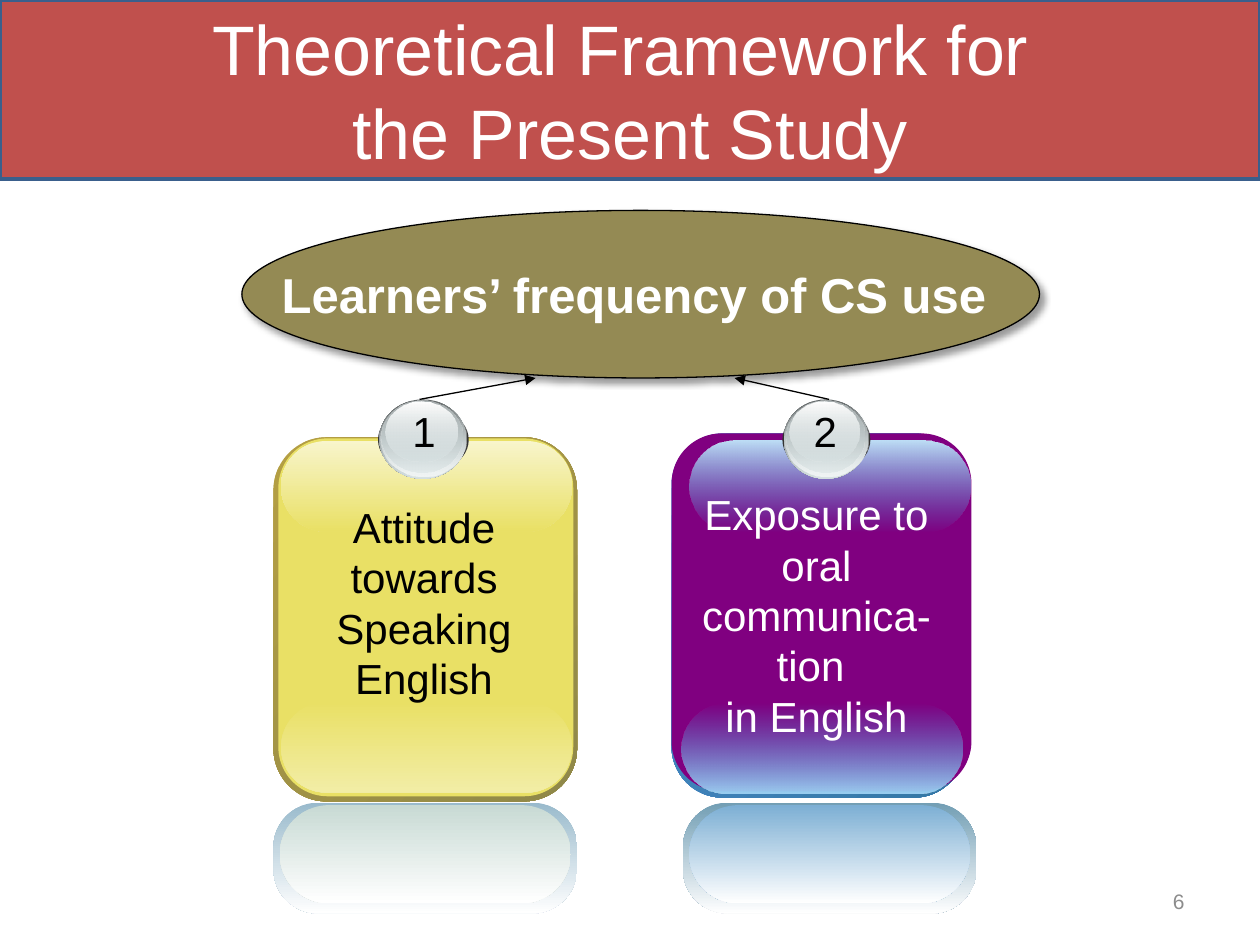
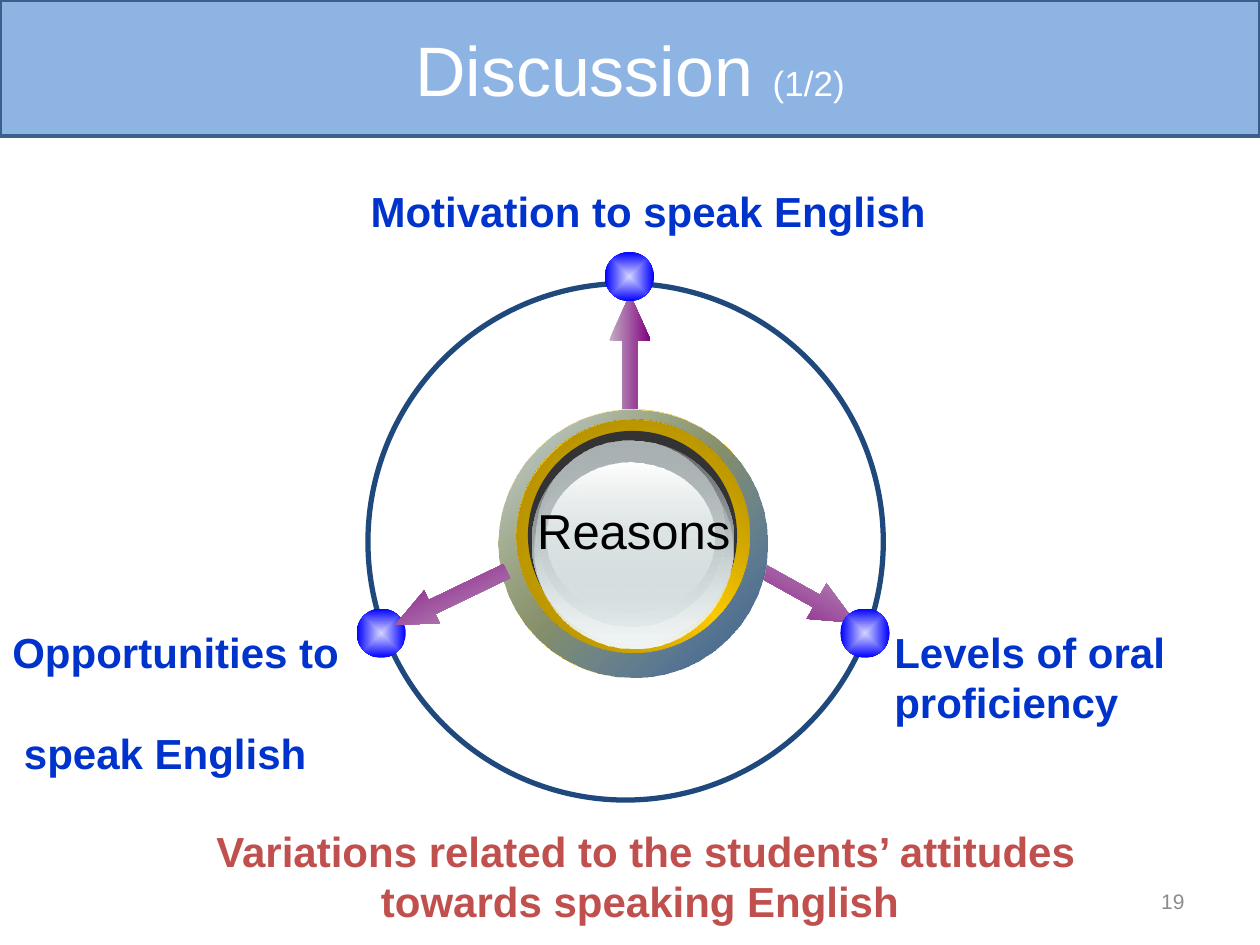
from pptx import Presentation
from pptx.dml.color import RGBColor
from pptx.enum.shapes import MSO_CONNECTOR, MSO_SHAPE
from pptx.enum.text import MSO_ANCHOR, PP_ALIGN
from pptx.oxml import parse_xml
from pptx.util import Inches, Pt

OVAL = MSO_SHAPE.OVAL
ROUNDED = MSO_SHAPE.ROUNDED_RECTANGLE
ARROW = MSO_SHAPE.RIGHT_ARROW
RECTANGLE = MSO_SHAPE.RECTANGLE
STRAIGHT = MSO_CONNECTOR.STRAIGHT
LEFT, CENTER, RIGHT = PP_ALIGN.LEFT, PP_ALIGN.CENTER, PP_ALIGN.RIGHT
TOP, MIDDLE = MSO_ANCHOR.TOP, MSO_ANCHOR.MIDDLE

FONT = "Arial"
NAMESPACE = 'xmlns:a="http://schemas.openxmlformats.org/drawingml/2006/main"'
COLORS = {
    "black": "000000", "white": "FFFFFF", "number": "8C8C8C",
    "red": "C0504D", "sky": "8EB4E3", "band_line": "3A5F8C",
    "olive": "948A54", "yellow": "E9E065", "purple": "800080",
    "label": "0033CC", "orbit": "1F497D", "gold": "FFCC00",
    "dark": "333333", "glass": "D6E1E2", "blue": "3CA1E6",
}

# A gradient is a list of (position, colour, opacity) stops in percent.
GLASS_FILLS = [
    COLORS["dark"],
    [(0, "636869", 100), (100, COLORS["glass"], 100)],
    [(0, COLORS["glass"], 0), (100, "F1F5F5", 100)],
    [(0, "AAB2B3", 100), (100, COLORS["glass"], 48)],
    [(0, COLORS["white"], 100), (100, COLORS["glass"], 38)],
]
ARROW_FILL = [(0, "C3B0C3", 100), (100, COLORS["purple"], 100)]
DOT_FILL = [(0, "D5D5FF", 100), (100, "0000FF", 100)]


def add_shape(shapes, kind, at, fill=None, angle=90, line=None, width=1,
              adjust=(), rotation=0):
    """Add a preset shape; angle None makes a gradient run out from the centre."""
    shape = shapes.add_shape(kind, *[Inches(length) for length in at])
    shape.shadow.inherit = False
    shape.rotation = rotation
    for index, value in enumerate(adjust):
        shape.adjustments[index] = value
    shape.fill.background()
    if isinstance(fill, str):
        shape.fill.solid()
        shape.fill.fore_color.rgb = RGBColor.from_string(fill)
    elif fill:
        stops = "".join(
            f'<a:gs pos="{position * 1000}"><a:srgbClr val="{color}">'
            f'<a:alpha val="{opacity * 1000}"/></a:srgbClr></a:gs>'
            for position, color, opacity in fill)
        course = f'<a:lin ang="{(angle or 0) * 60000}" scaled="0"/>'
        if angle is None:
            course = ('<a:path path="shape"><a:fillToRect l="50000" t="50000" '
                      'r="50000" b="50000"/></a:path>')
        properties = shape._element.spPr
        empty_fill = properties.find("{*}noFill")
        properties.replace(empty_fill, parse_xml(
            f'<a:gradFill {NAMESPACE} rotWithShape="1">'
            f'<a:gsLst>{stops}</a:gsLst>{course}</a:gradFill>'))
    if line:
        shape.line.color.rgb = RGBColor.from_string(line)
        shape.line.width = Pt(width)
    else:
        shape.line.fill.background()
    return shape


def write(box, text, size=24, color="black", bold=False, align=CENTER,
          anchor=TOP, wrap=True, before=0, same_line=False):
    """Append text to a box, as a new paragraph unless same_line is set."""
    frame = box.text_frame
    frame.word_wrap = wrap
    frame.vertical_anchor = anchor
    para = frame.paragraphs[-1]
    if para.runs and not same_line:
        para = frame.add_paragraph()
    para.alignment = align
    para.space_before = Pt(before)
    span = para.add_run()
    span.text = text
    span.font.name = FONT
    span.font.size = Pt(size)
    span.font.bold = bold
    span.font.color.rgb = RGBColor.from_string(COLORS[color])


deck = Presentation()
deck.slide_width, deck.slide_height = Inches(10), Inches(7.5)

# Title bands and page numbers
pages, bands = [], []
for number, band_height, band_color in [("6", 1.42, "red"), ("19", 1.08, "sky")]:
    page = deck.slides.add_slide(deck.slide_layouts[6])
    band = add_shape(page.shapes, RECTANGLE, (0, 0, 10, band_height),
                     COLORS[band_color], line=COLORS["band_line"], width=2)
    box = page.shapes.add_textbox(Inches(7.17), Inches(6.95), Inches(2.33), Inches(0.4))
    write(box, number, size=12, color="number", align=RIGHT, anchor=MIDDLE)
    pages.append(page)
    bands.append(band)
framework, discussion = pages
for line_text in ["Theoretical Framework for ", "the Present Study"]:
    write(bands[0], line_text, size=40, color="white", anchor=MIDDLE)
write(bands[1], "Discussion ", size=40, color="white", anchor=MIDDLE)
write(bands[1], "(1/2)", size=20, color="white", anchor=MIDDLE, same_line=True)

# Framework: two glossy cards, each with a numbered badge
BODY, INNER, GLOSS, MIRROR = 0.175, 0.167, 0.5, 0.404
cards = [
    {"number": "1", "lines": ["Attitude towards Speaking English"], "color": "black",
     "text_at": (2.17, 3.93, 2.39, 1.72), "badge": 3, "number_at": 3.08,
     "number_width": 0.57, "badge_scale": 1,
     "layers": [
         ((2.17, 3.47, 2.41, 2.89), BODY, [(0, "B59F43", 100), (100, "8F8849", 100)], 45),
         ((2.21, 3.48, 2.34, 2.84), INNER, COLORS["yellow"], 90),
         ((2.23, 5.57, 2.31, 0.72), GLOSS,
          [(0, COLORS["yellow"], 100), (100, "F2EDA6", 100)], 90),
         ((2.23, 3.5, 2.31, 0.72), GLOSS,
          [(0, "F8F5CC", 100), (100, COLORS["yellow"], 100)], 90),
         ((2.17, 6.37, 2.41, 0.88), MIRROR,
          [(0, "99BACC", 100), (100, COLORS["white"], 100)], 90),
         ((2.22, 6.39, 2.31, 0.78), GLOSS,
          [(0, "C8DAD4", 100), (100, COLORS["white"], 100)], 90)]},
    {"number": "2", "lines": ["Exposure to oral communica-tion ", "in English"],
     "color": "white", "text_at": (5.33, 3.83, 2.3, 2.12), "badge": 6.21,
     "number_at": 6.23, "number_width": 0.64, "badge_scale": 0.97,
     "layers": [
         ((5.33, 3.44, 2.33, 2.89), BODY, [(0, "4E91D4", 100), (100, "3477A4", 100)], 45),
         ((5.33, 3.44, 2.38, 2.84), INNER, COLORS["purple"], 90),
         ((5.41, 5.58, 2.23, 0.72), GLOSS,
          [(0, COLORS["blue"], 0), (100, "9BCFF2", 100)], 90),
         ((5.47, 3.5, 2.23, 0.72), GLOSS,
          [(0, "BEE0F7", 100), (100, COLORS["blue"], 0)], 90),
         ((5.42, 6.37, 2.33, 0.88), MIRROR,
          [(0, "729EB4", 100), (100, COLORS["white"], 100)], 90),
         ((5.47, 6.39, 2.23, 0.78), GLOSS,
          [(0, "7DAFD4", 100), (100, COLORS["white"], 100)], 90)]},
]
# Offset from the badge's left, top, width, height
badge_layers = [(0, 3.22, 0.72, 0.54), (0.01, 3.17, 0.69, 0.63), (0.02, 3.17, 0.68, 0.61),
                (0.03, 3.18, 0.64, 0.57), (0.06, 3.19, 0.57, 0.47)]
for card in cards:
    group = framework.shapes.add_group_shape().shapes
    for at, corner, fill, angle in card["layers"]:
        add_shape(group, ROUNDED, at, fill, angle, adjust=[corner])
    for (offset, top, width, height), fill in zip(badge_layers, GLASS_FILLS):
        scale = card["badge_scale"]
        add_shape(group, OVAL, (card["badge"] + offset, top, width * scale, height), fill)
    box = group.add_textbox(Inches(card["number_at"]), Inches(3.17),
                            Inches(card["number_width"]), Inches(0.56))
    write(box, card["number"])
    box = group.add_textbox(*[Inches(length) for length in card["text_at"]])
    for line_text in card["lines"]:
        write(box, line_text, color=card["color"])

# Framework: the outcome and the arrows leading to it
outcome = add_shape(framework.shapes, OVAL, (1.92, 1.67, 6.33, 1.33), COLORS["olive"],
                    line=COLORS["black"], width=0.75)
write(outcome, "Learners’ frequency of CS use ", size=28, color="white", bold=True,
      anchor=MIDDLE, wrap=False)
outcome._element.spPr.find("{*}effectLst").append(parse_xml(
    f'<a:outerShdw {NAMESPACE} blurRad="{Pt(4)}" dist="{Pt(3)}" dir="2700000" '
    'algn="tl" rotWithShape="0"><a:srgbClr val="000000"><a:alpha val="40000"/>'
    '</a:srgbClr></a:outerShdw>'))
for start, end in [(3.33, 4.25), (6.58, 5.83)]:
    link = framework.shapes.add_connector(
        STRAIGHT, Inches(start), Inches(3.17), Inches(end), Inches(3))
    link.line.color.rgb = RGBColor.from_string(COLORS["black"])
    link.line.width = Pt(0.75)
    link.line._get_or_add_ln().append(parse_xml(f'<a:tailEnd {NAMESPACE} type="triangle"/>'))
    link._element.spPr.append(parse_xml(f'<a:effectLst {NAMESPACE}/>'))

# Discussion: orbit, dots and the hub
shapes = discussion.shapes
for at, rotation in [((4.5, 2.67, 1, 0.33), 270), ((5.93, 4.56, 0.92, 0.32), 29.1)]:
    add_shape(shapes, ARROW, at, ARROW_FILL, adjust=[0.352, 1.11], rotation=rotation)
add_shape(shapes, OVAL, (2.92, 2.25, 4.09, 4.1), line=COLORS["orbit"], width=3)
for left, top in [(2.83, 4.83), (4.8, 2), (6.67, 4.83)]:
    add_shape(shapes, OVAL, (left, top, 0.39, 0.39), DOT_FILL, angle=None)

rim, ring = (3.96, 3.25, 2.13, 2.13), (4.1, 3.33, 1.85, 1.85)
gold = COLORS["gold"]
for at, fill, angle in [
    (rim, [(0, COLORS["white"], 100), (50, gold, 100), (100, COLORS["white"], 100)], 45),
    (rim, [(0, "4F81BD", 32), (100, "395C87", 100)], 45),
    (ring, [(0, "8A6E00", 100), (50, gold, 100), (100, "8A6E00", 100)], 315),
    (ring, [(0, "A28200", 100), (100, gold, 0)], 45),
]:
    add_shape(shapes, OVAL, at, fill, angle)
hub_layers = [(4.19, 3.42, 1.66, 1.66), (4.22, 3.5, 1.61, 1.61), (4.24, 3.58, 1.57, 1.57),
              (4.26, 3.5, 1.49, 1.47), (4.34, 3.67, 1.33, 1.19)]
for at, fill in zip(hub_layers, GLASS_FILLS):
    add_shape(shapes, OVAL, at, fill)
add_shape(shapes, ARROW, (3.09, 4.6, 0.98, 0.29), ARROW_FILL,
          adjust=[0.425, 1.11], rotation=154.3)

# Discussion: labels, as place, lines and format
label = {"color": "label", "bold": True, "align": LEFT}
for at, lines, style in [
    ((3.75, 3.92, 2.56, 0.57), ["Reasons"], {"size": 28}),
    ((2.75, 1.42, 4.92, 0.91), [" Motivation to speak English"], label),
    ((7, 4.92, 3, 0.91), ["Levels of oral proficiency"], label),
    ((0, 4.92, 2.83, 1.72), ["Opportunities to", " speak English"], label),
    ((1.08, 6.5, 8, 0.91),
     [" Variations related to the students’ attitudes towards speaking English"],
     {"color": "red", "bold": True}),
]:
    box = shapes.add_textbox(*[Inches(length) for length in at])
    for index, line_text in enumerate(lines):
        write(box, line_text, before=29 * index, **style)

deck.save("out.pptx")
